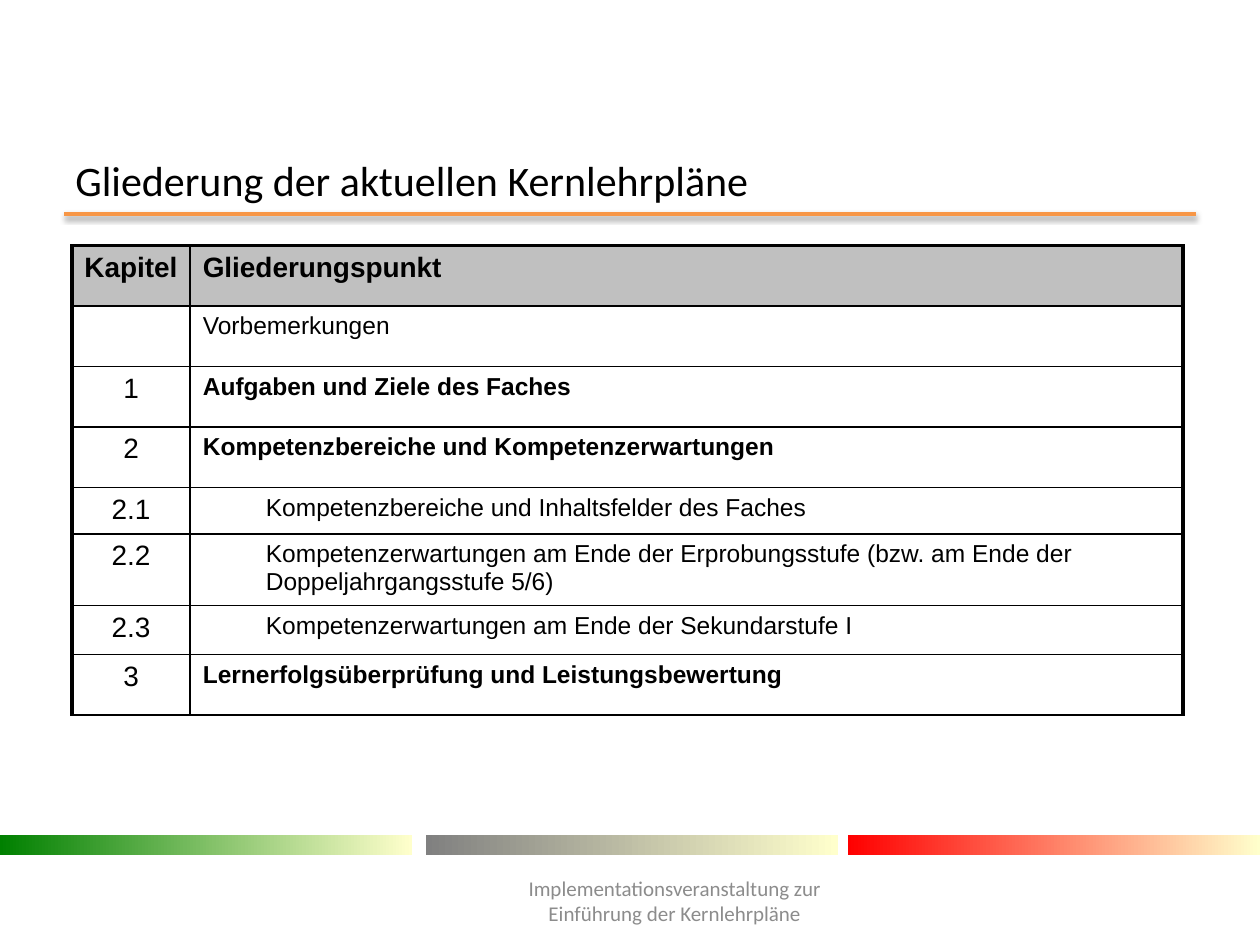
from lxml.etree import SubElement
from pptx import Presentation
from pptx.dml.color import RGBColor
from pptx.enum.shapes import MSO_CONNECTOR, MSO_SHAPE
from pptx.enum.text import MSO_ANCHOR, PP_ALIGN
from pptx.oxml import parse_xml
from pptx.oxml.ns import nsdecls, qn
from pptx.util import Inches, Pt

BLACK = RGBColor(0x00, 0x00, 0x00)
ORANGE = RGBColor(0xF7, 0x96, 0x46)
GREEN = RGBColor(0x00, 0x80, 0x00)
GRAY = RGBColor(0x80, 0x80, 0x80)
RED = RGBColor(0xFF, 0x00, 0x00)
CREAM = RGBColor(0xFF, 0xFF, 0xCC)
HEADER_GRAY = RGBColor(0xC0, 0xC0, 0xC0)
FOOTER_GRAY = RGBColor(0x8C, 0x8C, 0x8C)

COLUMN_WIDTHS = [0.94, 7.88]
THIN, THICK = 1, 2.25
CHAPTERS = [
    ("Kapitel", "Gliederungspunkt", 0.48),
    ("", "Vorbemerkungen", 0.48),
    ("1", "Aufgaben und Ziele des Faches", 0.48),
    ("2", "Kompetenzbereiche und Kompetenzerwartungen", 0.48),
    ("2.1", "Kompetenzbereiche und Inhaltsfelder des Faches", 0.37),
    ("2.2", "Kompetenzerwartungen am Ende der Erprobungsstufe "
            "(bzw. am Ende der Doppeljahrgangsstufe 5/6)", 0.45),
    ("2.3", "Kompetenzerwartungen am Ende der Sekundarstufe I", 0.39),
    ("3", "Lernerfolgsüberprüfung und Leistungsbewertung", 0.48),
]


class SlideBuilder:
    heading_font = "Calibri"
    table_font = "Arial"

    def __init__(self, slide):
        self.slide = slide

    def style(self, paragraph, font, size, color, bold=False):
        for run in paragraph.runs:
            run.font.name = font
            run.font.size = Pt(size)
            run.font.bold = bold
            run.font.color.rgb = color

    def text(self, left, top, width, height, text, size, color, align):
        shape = self.slide.shapes.add_textbox(
            Inches(left), Inches(top), Inches(width), Inches(height))
        text_frame = shape.text_frame
        text_frame.word_wrap = True
        text_frame.vertical_anchor = MSO_ANCHOR.MIDDLE
        text_frame.text = text
        paragraph = text_frame.paragraphs[0]
        paragraph.alignment = align
        self.style(paragraph, self.heading_font, size, color)

    def rule(self, left, right, top):
        connector = self.slide.shapes.add_connector(
            MSO_CONNECTOR.STRAIGHT, Inches(left), Inches(top), Inches(right), Inches(top))
        connector.line.color.rgb = ORANGE
        connector.line.width = Pt(2)
        properties = connector._element.spPr
        properties.append(parse_xml(
            f'<a:effectLst {nsdecls("a")}>'
            f'<a:outerShdw blurRad="{Pt(3.1)}" dist="{Pt(1.6)}" dir="5400000" rotWithShape="0">'
            '<a:srgbClr val="000000"><a:alpha val="38000"/></a:srgbClr>'
            '</a:outerShdw></a:effectLst>'))

    def gradient_bar(self, left, top, width, height, color):
        shape = self.slide.shapes.add_shape(
            MSO_SHAPE.RECTANGLE, Inches(left), Inches(top), Inches(width), Inches(height))
        shape.shadow.inherit = False
        shape.line.fill.background()
        shape.fill.gradient()
        shape.fill.gradient_angle = 0
        for stop, stop_color in zip(shape.fill.gradient_stops, (color, CREAM)):
            stop.color.rgb = stop_color

    def borders(self, cell, left, right, top, bottom):
        properties = cell._tc.get_or_add_tcPr()
        sides = {"a:lnL": left, "a:lnR": right, "a:lnT": top, "a:lnB": bottom}
        for position, (tag, width) in enumerate(sides.items()):
            line = SubElement(properties, qn(tag), w=str(Pt(width)))
            fill = SubElement(line, qn("a:solidFill"))
            SubElement(fill, qn("a:srgbClr"), val=str(BLACK))
            properties.insert(position, line)

    def cell(self, cell, text, is_header, is_chapter, level):
        if is_header:
            cell.fill.solid()
            cell.fill.fore_color.rgb = HEADER_GRAY
        else:
            cell.fill.background()
        self.borders(cell, THICK if is_chapter else THIN, THIN if is_chapter else THICK,
                     THICK if is_header else THIN, THIN)
        cell.text = text
        paragraph = cell.text_frame.paragraphs[0]
        if is_chapter and not is_header:
            paragraph.alignment = PP_ALIGN.CENTER
        if level == 2 and not is_chapter:
            paragraph.level = 1
            properties = paragraph._p.get_or_add_pPr()
            properties.set("marL", str(Inches(0.5)))
            properties.set("indent", "0")
        size = 16 if is_header or is_chapter else 14
        bold = is_header or (level == 1 and not is_chapter)
        self.style(paragraph, self.table_font, size, BLACK, bold)

    def table(self, left, top, chapters):
        width = sum(COLUMN_WIDTHS)
        height = sum(row_height for _, _, row_height in chapters)
        table = self.slide.shapes.add_table(
            len(chapters), len(COLUMN_WIDTHS),
            Inches(left), Inches(top), Inches(width), Inches(height)).table
        table.first_row = False
        table.horz_banding = False
        for column, column_width in zip(table.columns, COLUMN_WIDTHS):
            column.width = Inches(column_width)
        for index, (number, title, row_height) in enumerate(chapters):
            table.rows[index].height = Inches(row_height)
            level = len(number.split(".")) if number else 0
            for column, text in enumerate((number, title)):
                self.cell(table.cell(index, column), text, index == 0, column == 0, level)


def main():
    presentation = Presentation()
    presentation.slide_width = Inches(10)
    presentation.slide_height = Inches(7.5)
    builder = SlideBuilder(presentation.slides.add_slide(presentation.slide_layouts[6]))

    builder.rule(0.51, 9.49, 1.7)
    for left, color in ((0, GREEN), (3.38, GRAY), (6.73, RED)):
        builder.gradient_bar(left, 6.63, 3.27, 0.16, color)
    builder.text(0.5, 1.23, 9, 0.39, "Gliederung der aktuellen Kernlehrpläne",
                 24, BLACK, PP_ALIGN.LEFT)
    builder.text(3.74, 6.95, 3.23, 0.4,
                 "Implementationsveranstaltung zur Einführung der Kernlehrpläne",
                 12, FOOTER_GRAY, PP_ALIGN.CENTER)
    builder.table(0.57, 1.95, CHAPTERS)

    presentation.save("out.pptx")


if __name__ == "__main__":
    main()
